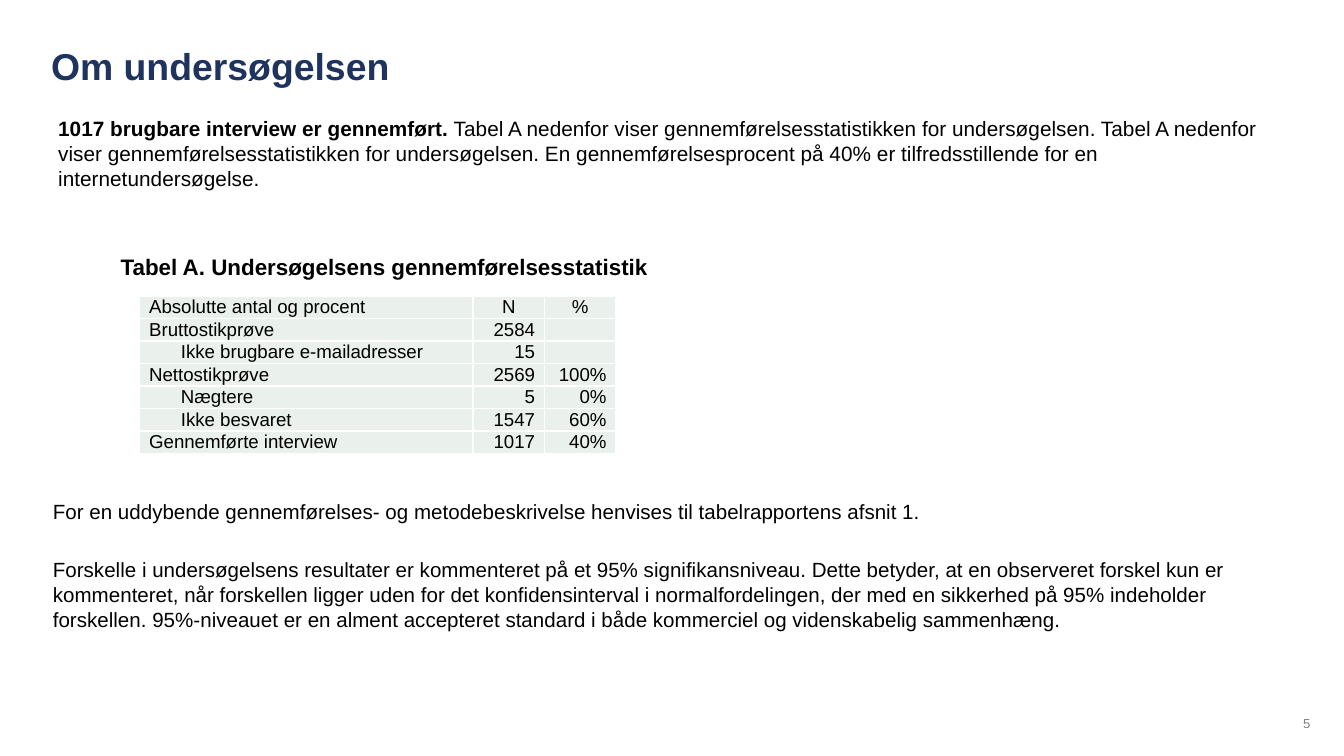
from lxml.etree import SubElement
from pptx import Presentation
from pptx.dml.color import RGBColor
from pptx.enum.text import MSO_ANCHOR as Anchor, PP_ALIGN as Align
from pptx.oxml.ns import qn
from pptx.util import Cm, Pt

# Content
TITLE = "Om undersøgelsen"
INTRO = [[
    ("1017 brugbare interview er gennemført.", True),
    (" Tabel A nedenfor viser gennemførelsesstatistikken for undersøgelsen. "
     "Tabel A nedenfor viser gennemførelsesstatistikken for undersøgelsen. "
     "En gennemførelsesprocent på 40% er tilfredsstillende for en "
     "internetundersøgelse.", False),
]]
CAPTION = [[("Tabel A. Undersøgelsens gennemførelsesstatistik", True)]]
NOTES = [
    [("For en uddybende gennemførelses- og metodebeskrivelse henvises til "
      "tabelrapportens afsnit 1.", False)],
    [("Forskelle i undersøgelsens resultater er kommenteret på et 95% "
      "signifikansniveau. Dette betyder, at en observeret forskel kun er "
      "kommenteret, når forskellen ligger uden for det konfidensinterval i "
      "normalfordelingen, der med en sikkerhed på 95% indeholder forskellen. "
      "95%-niveauet er en alment accepteret standard i både kommerciel og "
      "videnskabelig sammenhæng.", False)],
]
PAGE_NUMBER = [[("5", False)]]
HEADER = ("Absolutte antal og procent", "N", "%")
ROWS = [  # label, count, share, indented
    ("Bruttostikprøve", "2584", "", False),
    ("Ikke brugbare e-mailadresser", "15", "", True),
    ("Nettostikprøve", "2569", "100%", False),
    ("Nægtere", "5", "0%", True),
    ("Ikke besvaret", "1547", "60%", True),
    ("Gennemførte interview", "1017", "40%", False),
]

# Style
FONT = "Arial"
NAVY = RGBColor(0x1E, 0x33, 0x5E)
BLACK = RGBColor(0, 0, 0)
GREY = RGBColor(0x80, 0x80, 0x80)
PALE_GREEN = RGBColor(0xEA, 0xF0, 0xEB)
COLUMN_WIDTHS = (6.3, 1.35, 1.35)
ROW_HEIGHT = 0.42
CELL_MARGIN, INDENT = 0.18, 0.6


def set_font(paragraph, size, color=BLACK, bold=None):
    font = paragraph.font
    font.name, font.size, font.bold = FONT, Pt(size), bold
    font.color.rgb = color


def add_text(page, place, paragraphs, size, color=BLACK, side=0.25, gap=0, wrap=True):
    box = page.shapes.add_textbox(*map(Cm, place))
    frame = box.text_frame
    frame.word_wrap = wrap
    frame.margin_left = frame.margin_right = Cm(side)
    for index, spans in enumerate(paragraphs):
        para = frame.add_paragraph() if index else frame.paragraphs[0]
        if index:
            para.space_before = Pt(gap)
        set_font(para, size, color)
        for text, bold in spans:
            span = para.add_run()
            span.text = text
            span.font.bold = bold


def add_borders(cell):
    """White one-point lines; they must come before the cell fill."""
    properties = cell._tc.get_or_add_tcPr()
    for side in ("a:lnL", "a:lnR", "a:lnT", "a:lnB"):
        line = SubElement(properties, qn(side), w=str(Pt(1)))
        fill = SubElement(line, qn("a:solidFill"))
        SubElement(fill, qn("a:srgbClr"), val="FFFFFF")


def fill_cell(cell, text, align, indent=0):
    add_borders(cell)
    cell.fill.solid()
    cell.fill.fore_color.rgb = PALE_GREEN
    cell.vertical_anchor = Anchor.MIDDLE
    cell.margin_left, cell.margin_right = Cm(CELL_MARGIN + indent), Cm(CELL_MARGIN)
    cell.margin_top = cell.margin_bottom = 0
    cell.text = text
    para = cell.text_frame.paragraphs[0]
    para.alignment = align
    set_font(para, 10)


deck = Presentation()
deck.slide_width, deck.slide_height = Cm(25.4), Cm(14.28)
page = deck.slides.add_slide(deck.slide_layouts[5])

# Title
title = page.shapes.title
title.left, title.top, title.width, title.height = map(Cm, (0.71, 0.69, 22.86, 0.76))
title.text_frame.text = TITLE
title.text_frame.vertical_anchor = Anchor.TOP
heading = title.text_frame.paragraphs[0]
heading.alignment = Align.LEFT
set_font(heading, 20, NAVY, True)

# Body texts and page number
add_text(page, (0.1, 2.06, 25, 2.49), INTRO, 11.1, side=1)
add_text(page, (2.03, 4.65, 10.57, 1.55), CAPTION, 12, wrap=False)
add_text(page, (0, 9.3, 25.4, 6.45), NOTES, 11, side=1, gap=18)
add_text(page, (24.38, 13.39, 1.14, 0.56), PAGE_NUMBER, 7, GREY)

# Statistics table
row_count = len(ROWS) + 1
table = page.shapes.add_table(
    row_count, len(HEADER), Cm(2.64), Cm(5.59),
    Cm(sum(COLUMN_WIDTHS)), Cm(ROW_HEIGHT * row_count)).table
for column, width in zip(table.columns, COLUMN_WIDTHS):
    column.width = Cm(width)
for row in table.rows:
    row.height = Cm(ROW_HEIGHT)
for index, text in enumerate(HEADER):
    fill_cell(table.cell(0, index), text, Align.CENTER if index else Align.LEFT)
for number, (label, count, share, indented) in enumerate(ROWS, 1):
    fill_cell(table.cell(number, 0), label, Align.LEFT, INDENT if indented else 0)
    fill_cell(table.cell(number, 1), count, Align.RIGHT)
    fill_cell(table.cell(number, 2), share, Align.RIGHT)

deck.save("out.pptx")
